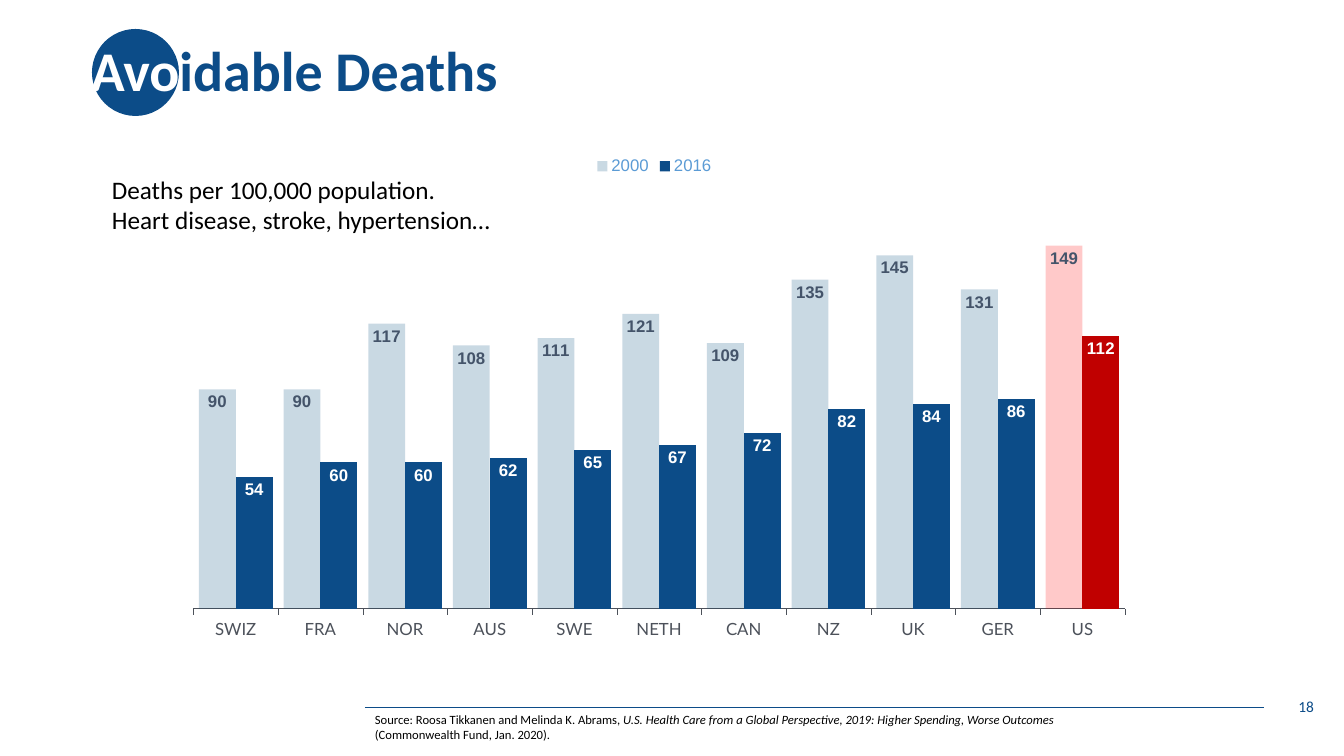
from lxml import etree
from pptx import Presentation
from pptx.chart.data import CategoryChartData
from pptx.dml.color import RGBColor
from pptx.enum.chart import XL_CHART_TYPE, XL_LABEL_POSITION, XL_LEGEND_POSITION, XL_TICK_LABEL_POSITION, XL_TICK_MARK
from pptx.enum.shapes import MSO_CONNECTOR, MSO_SHAPE
from pptx.enum.text import MSO_ANCHOR, PP_ALIGN
from pptx.oxml import parse_xml
from pptx.oxml.ns import nsdecls, qn
from pptx.util import Emu, Pt

CLUSTERED = XL_CHART_TYPE.COLUMN_CLUSTERED
INSIDE_END = XL_LABEL_POSITION.INSIDE_END
LEGEND_TOP = XL_LEGEND_POSITION.TOP
TICK_LOW = XL_TICK_LABEL_POSITION.LOW
TICK_OUT, TICK_NONE = XL_TICK_MARK.OUTSIDE, XL_TICK_MARK.NONE
STRAIGHT = MSO_CONNECTOR.STRAIGHT
OVAL = MSO_SHAPE.OVAL
TOP, MIDDLE = MSO_ANCHOR.TOP, MSO_ANCHOR.MIDDLE
LEFT, RIGHT = PP_ALIGN.LEFT, PP_ALIGN.RIGHT

PX_PER_INCH = 100.8
NAVY, WHITE, BLACK, GRAY = "0C4C88", "FFFFFF", "000000", "4C515A"
PALE_ALPHA = 21

COUNTRIES = ["SWIZ", "FRA", "NOR", "AUS", "SWE", "NETH", "CAN", "NZ", "UK", "GER", "US"]
DEATHS_2000 = [90, 90, 117, 108, 111, 121, 109, 135, 145, 131, 149]
DEATHS_2016 = [54, 60, 60, 62, 65, 67, 72, 82, 84, 86, 112]


def px(length):
    return Emu(round(length * 914400 / PX_PER_INCH))


def rgb(color):
    return RGBColor.from_string(color)


def style_font(font, size, color, name="Calibri", bold=False, italic=False):
    font.size, font.name = Pt(size), name
    font.bold, font.italic = bold, italic
    font.color.rgb = rgb(color)


def fill_solid(fill, color, alpha=100):
    """Fill with a colour; alpha is its opacity in percent."""
    fill.solid()
    fill.fore_color.rgb = rgb(color)
    if alpha < 100:
        color_node = fill._xPr.find(qn("a:solidFill"))[0]
        etree.SubElement(color_node, qn("a:alpha"), val=str(alpha * 1000))


def add_text(slide, box, paragraphs, size, anchor=TOP, align=LEFT, spacing=None, wrap=True):
    """Each paragraph is a list of (text, colour, bold, italic) runs."""
    frame = slide.shapes.add_textbox(*map(px, box)).text_frame
    frame.word_wrap = wrap
    frame.vertical_anchor = anchor
    for index, runs in enumerate(paragraphs):
        paragraph = frame.add_paragraph() if index else frame.paragraphs[0]
        paragraph.alignment = align
        paragraph.line_spacing = spacing
        for text, color, bold, italic in runs:
            run = paragraph.add_run()
            run.text = text
            style_font(run.font, size, color, bold=bold, italic=italic)


def add_rule(slide, left, right, y):
    rule = slide.shapes.add_connector(STRAIGHT, px(left), px(y), px(right), px(y))
    rule.line.color.rgb = rgb(NAVY)
    rule.line.width = Pt(0.5)
    etree.SubElement(rule._element.spPr, qn("a:effectLst"))


def add_disc(slide, left, top, diameter):
    disc = slide.shapes.add_shape(OVAL, px(left), px(top), px(diameter), px(diameter))
    disc.shadow.inherit = False
    fill_solid(disc.fill, NAVY)
    disc.line.fill.background()


def set_plot_layout(chart, x, y, width, height):
    """Place the inner plot area, as fractions of the chart."""
    plot_area = chart._chartSpace.chart.plotArea
    for old_layout in plot_area.findall(qn("c:layout")):
        plot_area.remove(old_layout)
    plot_area.insert(0, parse_xml(
        f'<c:layout {nsdecls("c")}><c:manualLayout><c:layoutTarget val="inner"/>'
        '<c:xMode val="edge"/><c:yMode val="edge"/>'
        f'<c:x val="{x}"/><c:y val="{y}"/><c:w val="{width}"/><c:h val="{height}"/>'
        '</c:manualLayout></c:layout>'))


def style_series(series, color, us_color, label_color, alpha=100):
    fill_solid(series.format.fill, color, alpha)
    series.invert_if_negative = False
    us_bar = series.points[COUNTRIES.index("US")]
    fill_solid(us_bar.format.fill, us_color, alpha)
    labels = series.data_labels
    labels.show_value = True
    labels.position = INSIDE_END
    labels.number_format = "#,##0"
    labels.number_format_is_linked = False
    style_font(labels.font, 12, label_color, "Arial", bold=True)


def style_axes(chart):
    countries, deaths = chart.category_axis, chart.value_axis
    countries.major_tick_mark, countries.minor_tick_mark = TICK_OUT, TICK_NONE
    countries.tick_label_position = TICK_LOW
    countries.has_major_gridlines = False
    countries.format.line.color.rgb = rgb(GRAY)
    countries.format.line.width = Pt(0.3)
    style_font(countries.tick_labels.font, 12, GRAY, "Lato")
    deaths.minimum_scale, deaths.maximum_scale = 0, 160
    deaths.has_major_gridlines = False
    deaths.visible = False


def add_deaths_chart(slide, box):
    data = CategoryChartData(number_format="#,##0")
    data.categories = COUNTRIES
    data.add_series("2000", DEATHS_2000)
    data.add_series("2016", DEATHS_2016)
    chart = slide.shapes.add_chart(CLUSTERED, *map(px, box), data).chart
    chart.has_title = False
    style_font(chart.font, 10, "5B9BD5", "Lato")
    chart.has_legend = True
    chart.legend.position = LEGEND_TOP
    chart.legend.include_in_layout = False
    style_font(chart.legend.font, 12, "5B9BD5", "Arial")
    style_axes(chart)
    bars = chart.plots[0]
    bars.gap_width, bars.overlap = 30, 0
    bars.vary_by_categories = False
    before, after = bars.series
    style_series(before, "044C7F", "FF0000", "44546A", PALE_ALPHA)
    style_series(after, NAVY, "C00000", WHITE)
    set_plot_layout(chart, 0.01, 0.14, 0.99, 0.75)


def main():
    presentation = Presentation()
    presentation.slide_width, presentation.slide_height = px(1344), px(756)
    slide = presentation.slides.add_slide(presentation.slide_layouts[6])

    add_rule(slide, 365, 1264, 707)
    add_disc(slide, 92, 29, 87)
    add_text(slide, (81, 0, 1159, 146),
             [[("Avo", WHITE, True, False), ("idable Deaths", NAVY, True, False)]],
             40, anchor=MIDDLE, spacing=0.9)
    add_text(slide, (1022, 686, 302, 40), [[("18", NAVY, False, False)]],
             11, anchor=MIDDLE, align=RIGHT)
    add_deaths_chart(slide, (184, 146, 941, 520))
    add_text(slide, (365, 707, 761, 40), [[
        ("Source: Roosa Tikkanen and Melinda K. Abrams, ", BLACK, False, False),
        ("U.S. Health Care from a Global Perspective, 2019: Higher Spending, Worse Outcomes ",
         BLACK, False, True),
        ("(Commonwealth Fund, Jan. 2020).", BLACK, False, False)]], 9)
    add_text(slide, (102, 169, 404, 72), [
        [("Deaths per 100,000 population.", BLACK, False, False)],
        [("Heart disease, stroke, hypertension…", BLACK, False, False)]], 18, wrap=False)
    presentation.save("out.pptx")


if __name__ == "__main__":
    main()
